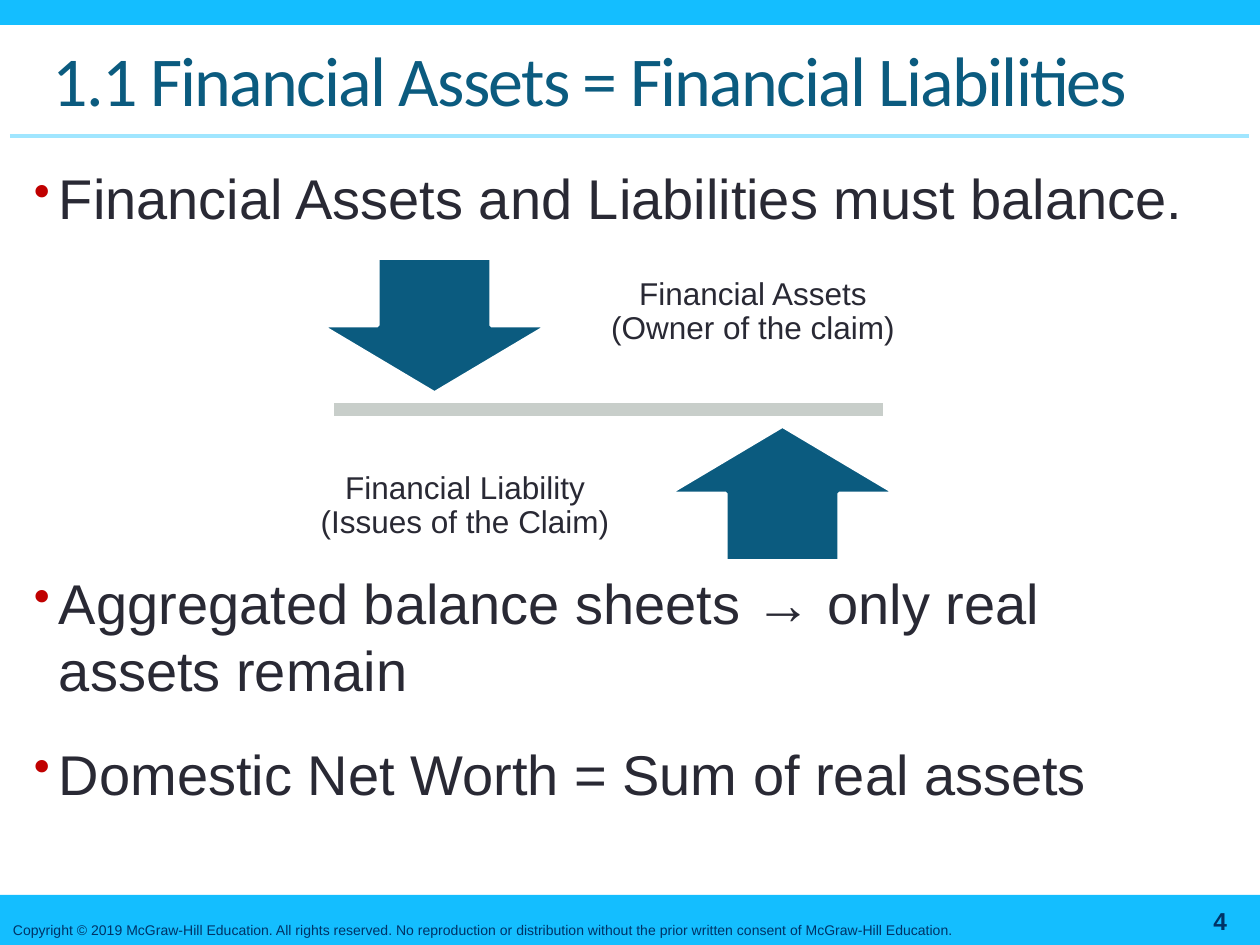
from lxml import etree
from pptx import Presentation
from pptx import util as u
from pptx.dml.color import RGBColor
from pptx.enum import shapes, text
from pptx.oxml.ns import qn

SCALE = 914400 / 126
SKY, PALE, TEAL, GREY = "14BEFF", "A0E6FF", "0B5B7F", "C8CECA"
NAVY, INK, RED, WHITE = "003366", "292934", "C00000", "FFFFFF"
LEFT, CENTER, RIGHT = text.PP_ALIGN.LEFT, text.PP_ALIGN.CENTER, text.PP_ALIGN.RIGHT
TOP, MIDDLE, BOTTOM = text.MSO_ANCHOR.TOP, text.MSO_ANCHOR.MIDDLE, text.MSO_ANCHOR.BOTTOM
KINDS = shapes.MSO_SHAPE


def px(*lengths):
    return [u.Emu(round(length * SCALE)) for length in lengths]


def color(value):
    return RGBColor.from_string(value)


def apply(target, values):
    for name, value in values.items():
        setattr(target, name, value)


def format_font(font, size, fill, name="Arial", bold=False):
    apply(font, {"size": u.Pt(size), "name": name, "bold": bold})
    font.color.rgb = color(fill)


def format_frame(frame, anchor, inset=(13, 6)):
    side, end = px(*inset)
    apply(frame, {"word_wrap": True, "auto_size": text.MSO_AUTO_SIZE.NONE,
                  "vertical_anchor": anchor, "margin_left": side,
                  "margin_right": side, "margin_top": end, "margin_bottom": end})


def add_text(slide, box, words, size, fill, align=LEFT, anchor=MIDDLE,
             inset=(13, 6), bold=False):
    frame = slide.shapes.add_textbox(*px(*box)).text_frame
    format_frame(frame, anchor, inset)
    paragraph = frame.paragraphs[0]
    paragraph.text = words
    paragraph.alignment = align
    format_font(paragraph.font, size, fill, bold=bold)
    return paragraph


def add_block(slide, kind, box, fill, outline=None):
    shape = slide.shapes.add_shape(kind, *px(*box))
    shape.shadow.inherit = False
    shape.fill.solid()
    shape.fill.fore_color.rgb = color(fill)
    if outline:
        shape.line.color.rgb = color(outline)
        shape.line.width = u.Pt(2.08)
    else:
        shape.line.fill.background()


def add_header(slide, box, words):
    left, top, width, height = box
    add_block(slide, KINDS.RECTANGLE, (left, top, width, 25), SKY)
    rule = slide.shapes.add_connector(
        shapes.MSO_CONNECTOR.STRAIGHT,
        *px(left + 10, top + height, left + width - 11, top + height))
    rule.line.color.rgb = color(PALE)
    rule.line.width = u.Pt(2.25)
    etree.SubElement(rule._element.spPr, qn("a:effectLst"))

    title = slide.shapes.title
    place = px(left + 40, top + 21, width - 79, height - 21)
    apply(title, dict(zip(("left", "top", "width", "height"), place)))
    format_frame(title.text_frame, MIDDLE)
    paragraph = title.text_frame.paragraphs[0]
    paragraph.alignment = LEFT
    run = paragraph.add_run()
    run.text = words
    format_font(run.font, 40, TEAL, "Calibri")
    run.font._element.set("spc", "-100")


def add_footer(slide, box, notice, number):
    left, top, width, height = box
    add_block(slide, KINDS.RECTANGLE, box, SKY)
    add_text(slide, (left + width - 168, top + 3, 148, 45), number, 14, NAVY,
             RIGHT, bold=True)
    add_text(slide, (left, top + height - 36, width, 35), notice, 8, NAVY,
             anchor=BOTTOM)


def add_bullet(paragraph):
    properties = paragraph._p.get_or_add_pPr()
    indent = px(25)[0]
    properties.set("marL", str(indent))
    properties.set("indent", str(-indent))
    bullet_color = etree.SubElement(properties, qn("a:buClr"))
    etree.SubElement(bullet_color, qn("a:srgbClr"), val=RED)
    etree.SubElement(properties, qn("a:buSzPct"), val="85000")
    etree.SubElement(properties, qn("a:buChar"), char="•")


def add_points(slide, box, points):
    """Each point is its words and the space before it in points."""
    frame = slide.shapes.add_textbox(*px(*box)).text_frame
    format_frame(frame, TOP)
    for index, (words, before) in enumerate(points):
        paragraph = frame.add_paragraph() if index else frame.paragraphs[0]
        paragraph.text = words
        add_bullet(paragraph)
        apply(paragraph, {"alignment": LEFT, "space_before": u.Pt(before),
                          "space_after": u.Pt(14.2)})
        format_font(paragraph.font, 32, INK)


def add_balance(slide, box):
    """Opposing arrows and their labels on both sides of a bar."""
    left, top, width, height = box
    add_block(slide, KINDS.MATH_MINUS,
              (left, top + (height - 69) / 2, width, 69), GREY, WHITE)
    sides = (
        (KINDS.DOWN_ARROW, 88, 16, 348, 0, "Financial Assets (Owner of the claim)"),
        (KINDS.UP_ARROW, 436, height - 151, 60, height - 141,
         "Financial Liability (Issues of the Claim)"),
    )
    for kind, arrow_x, arrow_y, label_x, label_y, words in sides:
        add_block(slide, kind, (left + arrow_x, top + arrow_y, 227, 135), TEAL, WHITE)
        label = add_text(slide, (left + label_x, top + label_y, 344, 141), words,
                         18, INK, CENTER, inset=(18, 18))
        label.line_spacing = 0.9


def main():
    presentation = Presentation()
    presentation.slide_width, presentation.slide_height = px(1260, 945)
    slide = presentation.slides.add_slide(presentation.slide_layouts[5])
    add_header(slide, (0, 0, 1260, 136), "1.1 Financial Assets = Financial Liabilities")
    add_footer(slide, (0, 895, 1260, 50),
               "Copyright © 2019 McGraw-Hill Education. All rights reserved. "
               "No reproduction or distribution without the prior written "
               "consent of McGraw-Hill Education.", "4")
    add_points(slide, (21, 158, 1197, 690), (
        ("Financial Assets and Liabilities must balance.", 0),
        ("Aggregated balance sheets → only real assets remain", 178.6),
        ("Domestic Net Worth = Sum of real assets", 6.4),
    ))
    add_balance(slide, (233, 242, 752, 335))
    presentation.save("out.pptx")


if __name__ == "__main__":
    main()
